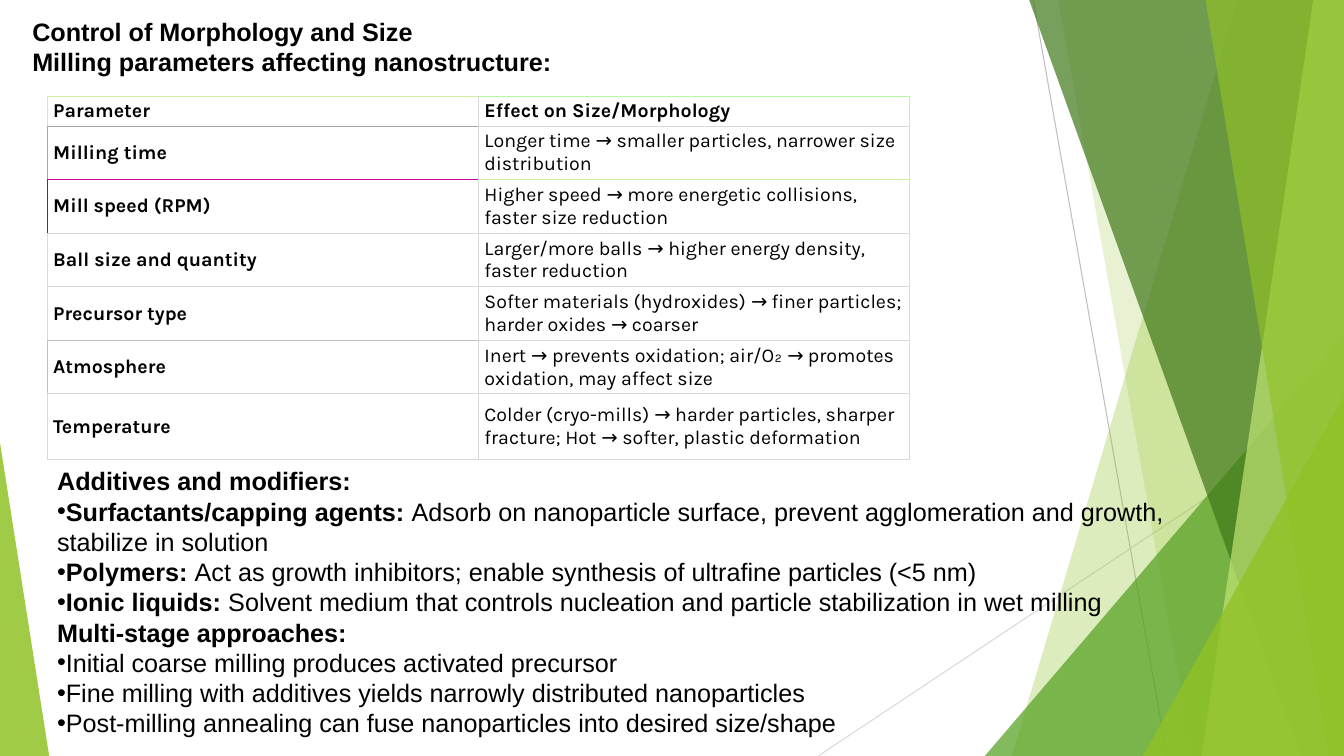
import pptx
import pptx.dml.color
import pptx.enum.shapes
import pptx.enum.text
import pptx.oxml
import pptx.oxml.ns
import pptx.util
from pptx.util import Cm

W, H, TOP = 33.87, 19.05, -0.02
GREY = "D9D9D9"
ANCHOR = pptx.enum.text.MSO_ANCHOR
SHAPE = pptx.enum.shapes.MSO_SHAPE

LINES = [(26.04, 0, 29.41, H, "BFBFBF"), (W, 10.24, 20.62, H, GREY)]
BANDS = [
    (31.19, 25.5, "90C226", 30),
    (26.67, 30.05, "90C226", 20),
    (25.93, 32.79, "3F7819", 70),
    (33.1, 30.28, "C0E474", 70),
    (30.38, 33.48, "90C226", 65),
]
TITLE = ["Control of Morphology and Size", "Milling parameters affecting nanostructure:"]
ROWS = [
    ("Parameter", "Effect on Size/Morphology"),
    ("Milling time", "Longer time → smaller particles, narrower size distribution"),
    ("Mill speed (RPM)", "Higher speed → more energetic collisions, faster size reduction"),
    ("Ball size and quantity", "Larger/more balls → higher energy density, faster reduction"),
    ("Precursor type", "Softer materials (hydroxides) → finer particles; harder oxides → coarser"),
    ("Atmosphere", "Inert → prevents oxidation; air/O₂ → promotes oxidation, may affect size"),
    ("Temperature", "Colder (cryo-mills) → harder particles, sharper fracture; "
                    "Hot → softer, plastic deformation"),
]
HEIGHTS = [0.71] + [1.35] * 5 + [1.65]
RULES = {(0, 0): "D0F1A0", (0, 1): "B0FCA0", (1, 0): "A6A6A6",
         (2, 0): "D000A1", (2, 1): "D0EEA0", (5, 0): "BFBFBF"}
LEFT_EDGES = {0: "D0F1A0", 1: "A6A6A6", 2: "404040", 5: "BFBFBF"}
NOTES = [
    ("Additives and modifiers:", "", False),
    ("Surfactants/capping agents:", "\u00a0Adsorb on nanoparticle surface, prevent "
     "agglomeration and growth, stabilize in solution", True),
    ("Polymers:", "\u00a0Act as growth inhibitors; enable synthesis of ultrafine particles (<5 nm)", True),
    ("Ionic liquids:", "\u00a0Solvent medium that controls nucleation and particle "
     "stabilization in wet milling", True),
    ("Multi-stage approaches:", "", False),
    ("", "Initial coarse milling produces activated precursor", True),
    ("", "Fine milling with additives yields narrowly distributed nanoparticles", True),
    ("", "Post-milling annealing can fuse nanoparticles into desired size/shape", True),
]


def rgb(value):
    return pptx.dml.color.RGBColor.from_string(value)


def sub(parent, tag, **attrs):
    el = pptx.oxml.parse_xml(f"<{tag} {pptx.oxml.ns.nsdecls('a')}/>")
    for name, value in attrs.items():
        el.set(name, str(value))
    parent.append(el)
    return el


def add_text(p, text, size=18, font="Arial", color="000000", bold=False):
    r = p.add_run()
    r.text = text
    r.font.size = pptx.util.Pt(size)
    r.font.name = font
    r.font.bold = bold
    r.font.color.rgb = rgb(color)


def paragraph(tf, index):
    p = tf.add_paragraph() if index else tf.paragraphs[0]
    p.alignment = pptx.enum.text.PP_ALIGN.LEFT
    return p


def prepare_frame(tf):
    tf.word_wrap = True
    tf.auto_size = pptx.enum.text.MSO_AUTO_SIZE.NONE
    tf.vertical_anchor = ANCHOR.TOP


def paint(sp, color, alpha):
    sp.shadow.inherit = False
    sp.fill.solid()
    sp.fill.fore_color.rgb = rgb(color)
    sp.line.fill.background()
    clr = sp._element.spPr.find(".//" + pptx.oxml.ns.qn("a:srgbClr"))
    sub(clr, "a:alpha", val=alpha * 1000)


def add_line(slide, x1, y1, x2, y2, color):
    c = slide.shapes.add_connector(
        pptx.enum.shapes.MSO_CONNECTOR.STRAIGHT, Cm(x1), Cm(y1), Cm(x2), Cm(y2))
    c.line.color.rgb = rgb(color)
    c.line.width = pptx.util.Pt(0.75)
    sub(c._element.spPr, "a:effectLst")


def add_band(slide, top_x, bottom_x, color, alpha):
    fb = slide.shapes.build_freeform(Cm(top_x), Cm(TOP))
    corners = [(W, TOP), (W, H), (bottom_x, H)]
    fb.add_line_segments([(Cm(x), Cm(y)) for x, y in corners], close=True)
    paint(fb.convert_to_shape(), color, alpha)


def add_triangle(slide, left, width, height, apex, color, alpha):
    sp = slide.shapes.add_shape(
        SHAPE.ISOSCELES_TRIANGLE, Cm(left), Cm(H - height), Cm(width), Cm(height))
    sp.adjustments[0] = apex
    paint(sp, color, alpha)


def add_backdrop(slide):
    for line in LINES:
        add_line(slide, *line)
    for band in BANDS[:2]:
        add_band(slide, *band)
    add_triangle(slide, W - 9.05, 9.05, 10.59, 1, "54A021", 72)
    for band in BANDS[2:]:
        add_band(slide, *band)
    add_triangle(slide, W - 5.07, 5.07, 9.07, 1, "90C226", 80)
    add_triangle(slide, 0, 1.24, 7.9, 0, "90C226", 85)


def set_title(slide):
    sp = slide.shapes.title
    sp.left, sp.top, sp.width, sp.height = Cm(0.56), Cm(0.28), Cm(16.94), Cm(1.8)
    prepare_frame(sp.text_frame)
    for i, text in enumerate(TITLE):
        add_text(paragraph(sp.text_frame, i), text, bold=True)


def add_borders(cell, row, col):
    edges = {
        "L": GREY if col else LEFT_EDGES.get(row, GREY),
        "R": GREY,
        "T": RULES.get((row, col), GREY),
        "B": RULES.get((row + 1, col), GREY),
    }
    tcPr = cell._tc.get_or_add_tcPr()
    for side, color in edges.items():
        ln = sub(tcPr, "a:ln" + side, w=pptx.util.Pt(0.75))
        sub(sub(ln, "a:solidFill"), "a:srgbClr", val=color)


def add_parameter_table(slide):
    frame = slide.shapes.add_table(
        len(ROWS), 2, Cm(1.19), Cm(2.44), Cm(21.74), Cm(sum(HEIGHTS)))
    table = frame.table
    table.first_row = table.horz_banding = False
    for column in table.columns:
        column.width = Cm(10.87)
    for i, texts in enumerate(ROWS):
        table.rows[i].height = Cm(HEIGHTS[i])
        for j, text in enumerate(texts):
            cell = table.cell(i, j)
            cell.margin_left = cell.margin_right = Cm(0.15)
            cell.margin_top = cell.margin_bottom = Cm(0.08)
            cell.vertical_anchor = ANCHOR.MIDDLE if i else ANCHOR.TOP
            add_borders(cell, i, j)
            cell.fill.background()
            add_text(paragraph(cell.text_frame, 0), text, size=14, font="Karla",
                     bold=i == 0 or j == 0)


def add_notes_text(slide):
    tf = slide.shapes.add_textbox(Cm(1.19), Cm(11.61), Cm(29.21), Cm(7.19)).text_frame
    prepare_frame(tf)
    for i, (lead, detail, bullet) in enumerate(NOTES):
        p = paragraph(tf, i)
        if bullet:
            pPr = p._p.get_or_add_pPr()
            sub(pPr, "a:buFont", typeface="Arial")
            sub(pPr, "a:buChar", char="•")
        if lead:
            add_text(p, lead, bold=True)
        if detail:
            add_text(p, detail)


def main():
    prs = pptx.Presentation()
    prs.slide_width, prs.slide_height = Cm(W), Cm(H)
    slide = prs.slides.add_slide(prs.slide_layouts[5])
    add_backdrop(slide)
    set_title(slide)
    add_parameter_table(slide)
    add_notes_text(slide)
    prs.save("out.pptx")


if __name__ == "__main__":
    main()
